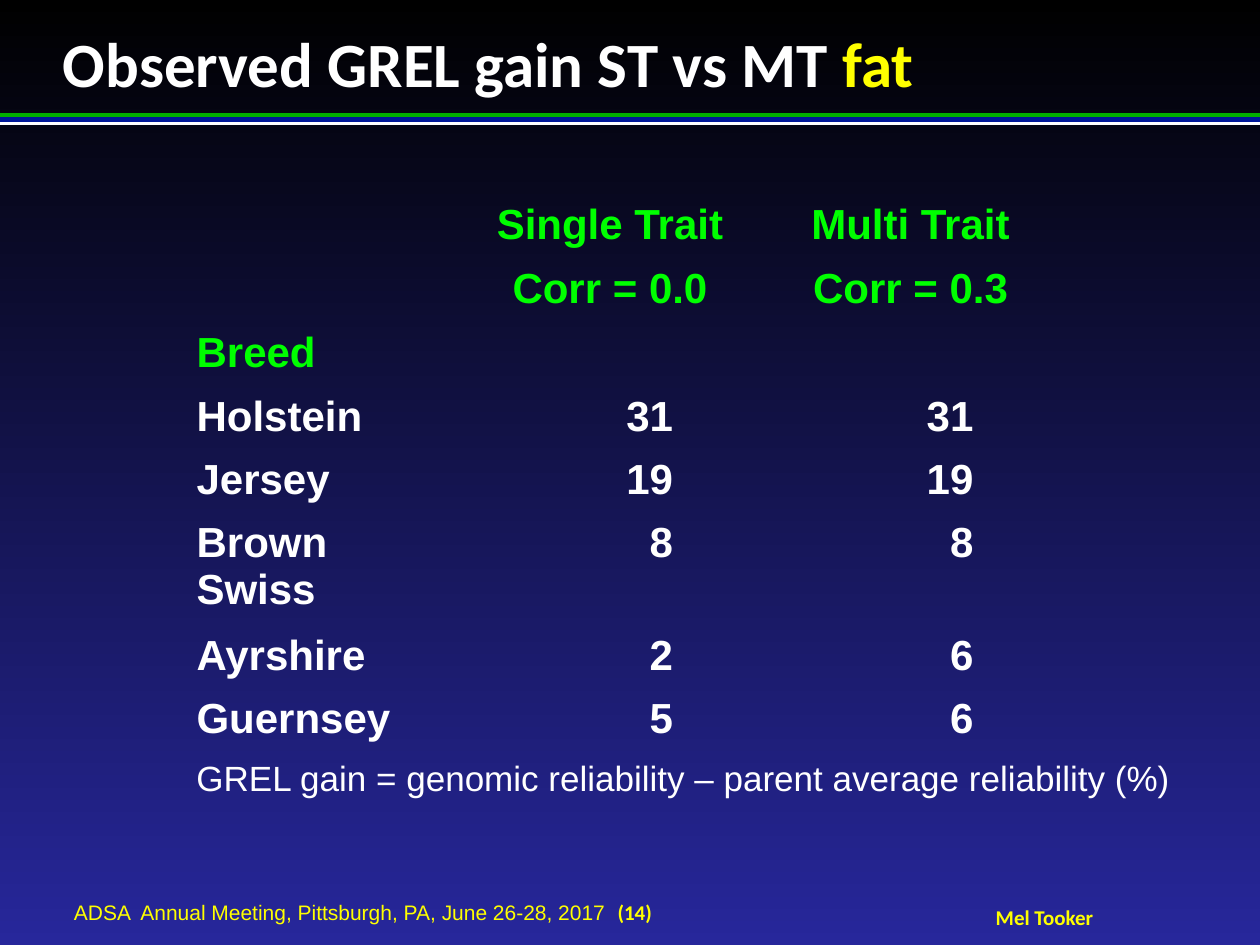
"""Build a slide comparing single-trait and multi-trait reliability gains for fat."""
from typing import NamedTuple

from lxml.etree import SubElement
from pptx import Presentation
from pptx.dml.color import RGBColor
from pptx.enum.shapes import MSO_SHAPE
from pptx.enum.text import MSO_ANCHOR, PP_ALIGN
from pptx.oxml.ns import qn
from pptx.util import Emu, Pt

PX_PER_INCH = 126
WHITE, YELLOW, GREEN = "FFFFFF", "FFFF00", "00FF00"
NO_STYLE_NO_GRID = "{2D5ABB26-0587-4C30-8999-92F81FD0307C}"


class Box(NamedTuple):
    left: int
    top: int
    width: int
    height: int


class Bar(NamedTuple):
    top: int
    height: int
    color: str


class TextRun(NamedTuple):
    text: str
    size: int
    color: str
    font: str = "Arial"
    bold: bool = False


class TextBlock(NamedTuple):
    box: Box
    runs: list[TextRun]
    anchor: MSO_ANCHOR = MSO_ANCHOR.TOP
    alignment: PP_ALIGN = PP_ALIGN.LEFT
    wrap: bool = True
    inset: bool = False


class TableRow(NamedTuple):
    height: int
    color: str
    cells: tuple[str, str, str]


BARS = [Bar(113, 4, "01AF00"), Bar(121, 4, WHITE), Bar(117, 5, "001799")]

TEXT_BLOCKS = [
    TextBlock(
        Box(989, 905, 111, 25),
        [TextRun("Mel Tooker", 12, YELLOW, "Calibri", True)],
        MSO_ANCHOR.MIDDLE, PP_ALIGN.CENTER, wrap=False,
    ),
    TextBlock(
        Box(74, 900, 857, 25),
        [
            TextRun("ADSA  Annual Meeting, Pittsburgh, PA, June 26-28, 2017  ", 12, YELLOW),
            TextRun("(14)", 12, YELLOW, "Calibri", True),
        ],
        MSO_ANCHOR.MIDDLE,
    ),
    TextBlock(
        Box(63, 25, 1134, 77),
        [
            TextRun("Observed GREL gain ST vs MT ", 36, WHITE, "Calibri", True),
            TextRun("fat", 36, YELLOW, "Calibri", True),
        ],
    ),
    TextBlock(
        Box(184, 750, 1027, 55),
        [TextRun("GREL gain = genomic reliability – parent average reliability (%)", 20, WHITE)],
        inset=True,
    ),
]

TABLE_LEFT, TABLE_TOP = 184, 195
COLUMN_WIDTHS = (284, 284, 317)
TABLE_ROWS = [
    TableRow(64, GREEN, ("", "Single Trait", "Multi Trait")),
    TableRow(64, GREEN, ("", "\tCorr = 0.0", "\tCorr = 0.3")),
    TableRow(64, GREEN, ("Breed", "", "")),
    TableRow(60, WHITE, ("Holstein", "\t31", "\t31")),
    TableRow(60, WHITE, ("Jersey", "\t19", "\t19")),
    TableRow(106, WHITE, ("Brown Swiss", "\t8", "\t8")),
    TableRow(60, WHITE, ("Ayrshire", "\t2", "\t6")),
    TableRow(60, WHITE, ("Guernsey", "\t5", "\t6")),
]


def px(length: int) -> Emu:
    return Emu(round(length * 914400 / PX_PER_INCH))


def rgb(color: str) -> RGBColor:
    return RGBColor.from_string(color)


def paint_background(slide) -> None:
    fill = slide.background.fill
    fill.gradient()
    fill.gradient_angle = 270
    for stop, color in zip(fill.gradient_stops, ("000000", "27279B")):
        stop.color.rgb = rgb(color)


def add_run(paragraph, text_run: TextRun) -> None:
    run = paragraph.add_run()
    run.text = text_run.text
    run.font.name = text_run.font
    run.font.size = Pt(text_run.size)
    run.font.bold = text_run.bold
    run.font.color.rgb = rgb(text_run.color)


def add_bar(slide, bar: Bar) -> None:
    shape = slide.shapes.add_shape(
        MSO_SHAPE.RECTANGLE, px(0), px(bar.top), px(1260), px(bar.height)
    )
    shape.shadow.inherit = False
    shape.fill.solid()
    shape.fill.fore_color.rgb = rgb(bar.color)
    shape.line.fill.background()


def add_text_block(slide, block: TextBlock) -> None:
    frame = slide.shapes.add_textbox(*map(px, block.box)).text_frame
    frame.word_wrap = block.wrap
    frame.vertical_anchor = block.anchor
    if not block.inset:
        frame.margin_left = frame.margin_right = 0
        frame.margin_top = frame.margin_bottom = 0
    paragraph = frame.paragraphs[0]
    paragraph.alignment = block.alignment
    for text_run in block.runs:
        add_run(paragraph, text_run)


def add_decimal_tab(paragraph) -> None:
    properties = paragraph._p.get_or_add_pPr()
    tab_list = SubElement(properties, qn("a:tabLst"))
    SubElement(tab_list, qn("a:tab"), pos=str(px(PX_PER_INCH)), algn="dec")


def add_gain_table(slide) -> None:
    frame = slide.shapes.add_table(
        len(TABLE_ROWS), len(COLUMN_WIDTHS), px(TABLE_LEFT), px(TABLE_TOP),
        px(sum(COLUMN_WIDTHS)), px(sum(row.height for row in TABLE_ROWS)),
    )
    table = frame.table
    table.first_row = table.horz_banding = False
    table._tbl.tblPr.find(qn("a:tableStyleId")).text = NO_STYLE_NO_GRID
    for column, width in zip(table.columns, COLUMN_WIDTHS):
        column.width = px(width)
    for table_row, row in zip(table.rows, TABLE_ROWS):
        table_row.height = px(row.height)
        for index, (cell, text) in enumerate(zip(table_row.cells, row.cells)):
            cell.fill.background()
            if not text:
                continue
            paragraph = cell.text_frame.paragraphs[0]
            paragraph.alignment = PP_ALIGN.CENTER if index else PP_ALIGN.LEFT
            if text.startswith("\t"):
                add_decimal_tab(paragraph)
            add_run(paragraph, TextRun(text, 24, row.color, bold=True))


def main() -> None:
    presentation = Presentation()
    presentation.slide_width, presentation.slide_height = px(1260), px(945)
    slide = presentation.slides.add_slide(presentation.slide_layouts[6])
    paint_background(slide)
    for bar in BARS:
        add_bar(slide, bar)
    for block in TEXT_BLOCKS:
        add_text_block(slide, block)
    add_gain_table(slide)
    presentation.save("out.pptx")


if __name__ == "__main__":
    main()
